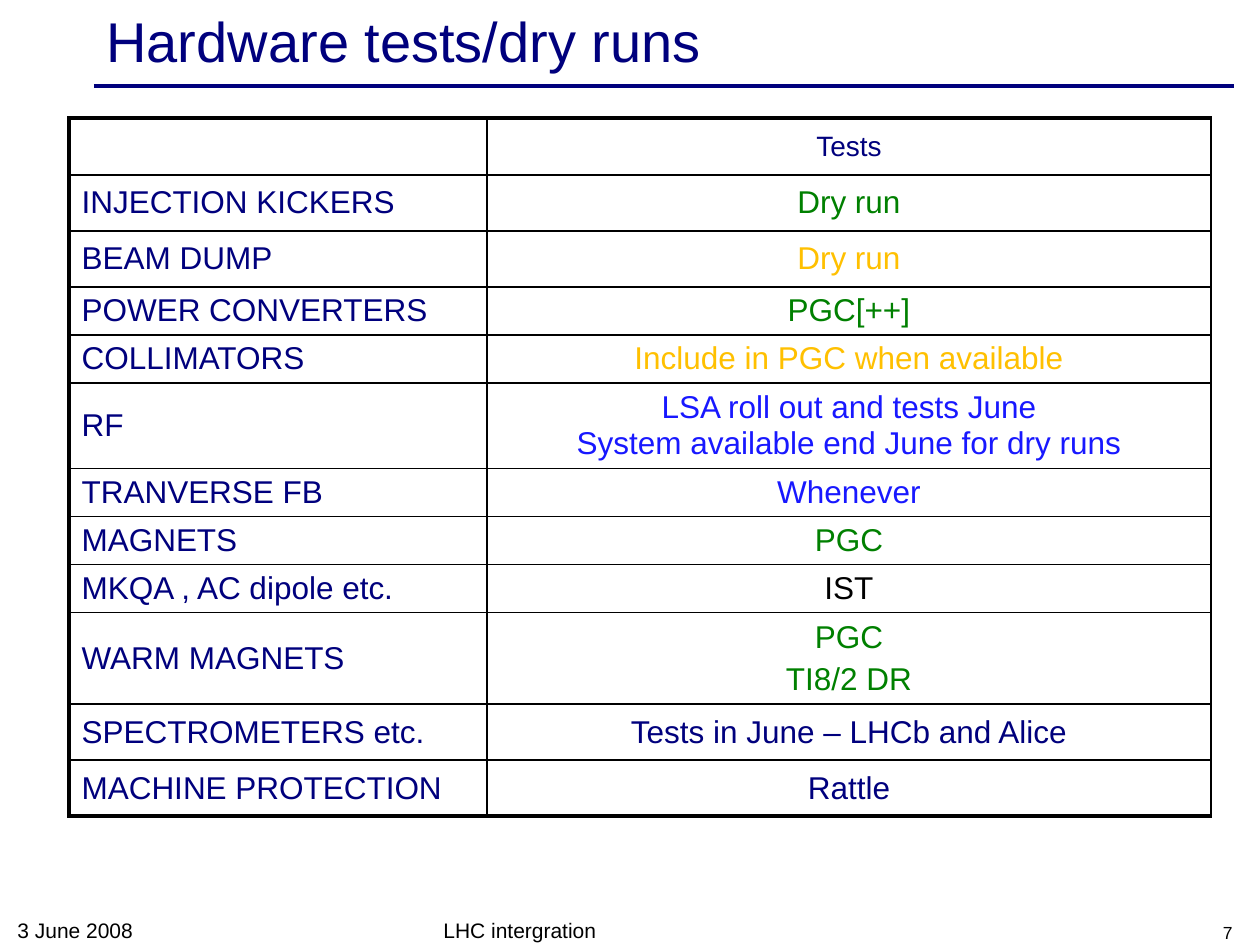
from lxml.etree import SubElement
from pptx import Presentation
from pptx.dml.color import RGBColor
from pptx.enum.shapes import MSO_CONNECTOR
from pptx.enum.text import MSO_ANCHOR, PP_ALIGN
from pptx.oxml.ns import qn
from pptx.util import Emu, Pt

PX = 914400 // 126
NAVY, GREEN, AMBER, BLUE, BLACK = "00007D", "008000", "FFC000", "1818FF", "000000"
THICK, THIN = 2.25, 1

# System, tests (one string per paragraph), colour of the tests, row height
ROWS = [
    ("", ["Tests"], NAVY, 57),
    ("INJECTION KICKERS", ["Dry run"], GREEN, 56),
    ("BEAM DUMP", ["Dry run"], AMBER, 56),
    ("POWER CONVERTERS", ["PGC[++]"], GREEN, 48),
    ("COLLIMATORS", ["Include in PGC when available"], AMBER, 48),
    ("RF", ["LSA roll out and tests June\nSystem available end June for dry runs"], BLUE, 83),
    ("TRANVERSE FB", ["Whenever"], BLUE, 48),
    ("MAGNETS", ["PGC"], GREEN, 48),
    ("MKQA , AC dipole etc.", ["IST"], BLACK, 48),
    ("WARM MAGNETS", ["PGC", "TI8/2 DR"], GREEN, 89),
    ("SPECTROMETERS etc.", ["Tests in June – LHCb and Alice"], NAVY, 56),
    ("MACHINE PROTECTION", ["Rattle"], NAVY, 56),
]
COLS = [418, 724]


def px(n):
    return Emu(n * PX)


def rgb(color):
    return RGBColor.from_string(color)


def write(tf, paragraphs, size=18, color=BLACK, align=PP_ALIGN.LEFT):
    """Fill a text frame; a newline inside a paragraph is a line break."""
    tf.word_wrap = True
    for i, text in enumerate(paragraphs):
        p = tf.add_paragraph() if i else tf.paragraphs[0]
        p.alignment = align
        if i:
            p.space_before = Pt(size * 0.2)
        for j, line in enumerate(text.split("\n")):
            if j:
                p.add_line_break()
            r = p.add_run()
            r.text = line
            r.font.name, r.font.size = "Arial", Pt(size)
            r.font.color.rgb = rgb(color)


def add_text(s, box, text, anchor=MSO_ANCHOR.BOTTOM, **fmt):
    sp = s.shapes.add_textbox(*map(px, box))
    sp.text_frame.vertical_anchor = anchor
    write(sp.text_frame, [text], **fmt)


def set_borders(cell, **widths):
    tcPr = cell._tc.get_or_add_tcPr()
    for side, width in widths.items():
        ln = SubElement(tcPr, qn(f"a:ln{side}"), w=str(Pt(width)))
        fill = SubElement(ln, qn("a:solidFill"))
        SubElement(fill, qn("a:srgbClr"), val=BLACK)


def add_header(s, box):
    x, y, w, h = box
    add_text(s, box, "Hardware tests/dry runs", MSO_ANCHOR.MIDDLE, size=32, color=NAVY)
    # Rule under the title
    rule_y = y + h + 10
    line = s.shapes.add_connector(MSO_CONNECTOR.STRAIGHT, px(x), px(rule_y),
                                  px(x + w + 6), px(rule_y))
    line.line.color.rgb = rgb(NAVY)
    line.line.width = Pt(2)
    SubElement(line._element.spPr, qn("a:effectLst"))


def add_tests_table(s, x, y):
    heights = [row[-1] for row in ROWS]
    table = s.shapes.add_table(len(ROWS), len(COLS), px(x), px(y),
                               px(sum(COLS)), px(sum(heights))).table
    table.first_row = table.horz_banding = False
    for col, width in zip(table.columns, COLS):
        col.width = px(width)
    last = len(ROWS) - 1
    for i, (system, tests, color, height) in enumerate(ROWS):
        table.rows[i].height = px(height)
        name, test = table.cell(i, 0), table.cell(i, 1)
        for cell in (name, test):
            cell.vertical_anchor = MSO_ANCHOR.MIDDLE
            cell.margin_top = cell.margin_bottom = px(5)
            set_borders(cell, L=THICK if cell is name else THIN, R=THIN,
                        T=THIN if i else THICK, B=THICK if i == last else THIN)
            cell.fill.background()
        if system:
            write(name.text_frame, [system], color=NAVY)
        write(test.text_frame, tests, size=18 if i else 16, color=color,
              align=PP_ALIGN.CENTER)


def add_footer(s, x, y, h):
    add_text(s, (x, y, 294, h), "3 June 2008", size=12)
    add_text(s, (x + 426, y, 400, h), "LHC intergration", size=12)
    add_text(s, (x + 946, y, 294, h), "7", size=10, align=PP_ALIGN.RIGHT)


def main():
    prs = Presentation()
    prs.slide_width, prs.slide_height = px(1260), px(945)
    s = prs.slides.add_slide(prs.slide_layouts[6])
    add_header(s, (94, 4, 1134, 72))
    add_tests_table(s, 69, 118)
    add_footer(s, 5, 913, 36)
    prs.save("out.pptx")


if __name__ == "__main__":
    main()
